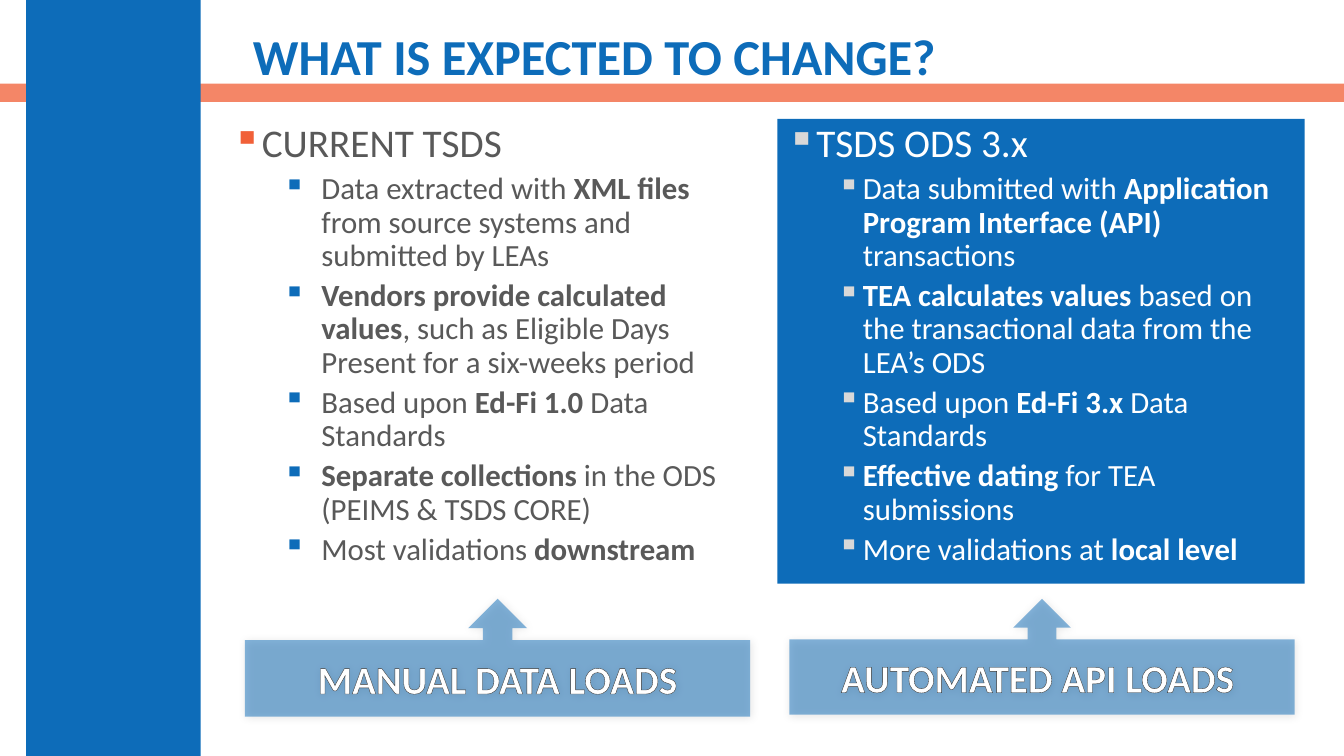
from lxml import etree
from pptx import Presentation, util as u
from pptx.dml.color import RGBColor
from pptx.enum import shapes, text
from pptx.oxml.ns import qn

Inches, Pt = u.Inches, u.Pt

# Content: *asterisks* enclose bold words
BLUE, ORANGE, GREY, PALE, WHITE = "0D6CB9", "F16038", "595959", "D8D8D8", "FFFFFF"
TITLE = "WHAT IS EXPECTED TO CHANGE?"
COLUMNS = [
    dict(box=(2.21, 1.18, 5.23, 4.76), fill=None, color=GREY,
         bullets=(ORANGE, BLUE), indent=(0.88, 0.38), heading="CURRENT TSDS",
         points=[
             "Data extracted with *XML files *from source systems and submitted by LEAs",
             "*Vendors provide calculated values*, such as Eligible Days Present for a six-weeks period",
             "Based upon *Ed-Fi 1.0 *Data Standards",
             "*Separate collections *in the ODS (PEIMS & TSDS CORE)",
             "Most validations *downstream*"]),
    dict(box=(7.71, 1.18, 5.23, 4.61), fill=BLUE, color=WHITE,
         bullets=(PALE, PALE), indent=(0.75, 0.25), heading="TSDS ODS 3.x",
         points=[
             "Data submitted with *Application Program Interface (API) *transactions",
             "*TEA calculates values *based on the transactional data from the LEA’s ODS",
             "Based upon *Ed-Fi 3.x *Data Standards",
             "*Effective dating *for TEA submissions",
             "More validations at *local level*"]),
]
CALLOUTS = [("MANUAL DATA LOADS", (2.43, 5.94, 5.01, 1.17)),
            ("AUTOMATED API LOADS ", (7.83, 5.94, 5.01, 1.15))]


def rgb(value):
    return RGBColor.from_string(value)


def sub(parent, tag, **attrs):
    return etree.SubElement(parent, qn(tag), {k: str(v) for k, v in attrs.items()})


def add_box(box, fill=None, alpha=100, preset=shapes.MSO_SHAPE.RECTANGLE):
    place = [Inches(v) for v in box]
    if fill is None:
        return s.shapes.add_textbox(*place)
    sp = s.shapes.add_shape(preset, *place)
    sp.shadow.inherit = False
    sp.line.fill.background()
    sp.fill.solid()
    sp.fill.fore_color.rgb = rgb(fill)
    if alpha < 100:
        color = sp.fill._xPr.find(".//" + qn("a:srgbClr"))
        sub(color, "a:alpha", val=alpha * 1000)
    return sp


def set_frame(sp, anchor):
    tf = sp.text_frame
    for name, value in dict(word_wrap=True, vertical_anchor=anchor).items():
        setattr(tf, name, value)
    return tf


def add_run(p, words, size, color, bold=False):
    r = p.add_run()
    r.text = words
    for name, value in dict(name="Calibri", size=Pt(size), bold=bold).items():
        setattr(r.font, name, value)
    r.font.color.rgb = rgb(color)
    return r


def add_bullet(p, color, left, hang):
    pPr = p._p.get_or_add_pPr()
    pPr.set("marL", str(Inches(left)))
    pPr.set("indent", str(-Inches(hang)))
    sub(sub(pPr, "a:buClr"), "a:srgbClr", val=color)
    sub(pPr, "a:buChar", char="▪")


prs = Presentation()
prs.slide_width, prs.slide_height = Inches(13.33), Inches(7.5)
s = prs.slides.add_slide(prs.slide_layouts[6])

# Bands and title
add_box((0, 0.83, 13.33, 0.18), ORANGE, 76)
add_box((0.26, 0, 1.73, 7.5), BLUE)
tf = set_frame(add_box((2.41, 0.18, 10.53, 0.82)), text.MSO_ANCHOR.MIDDLE)
p = tf.paragraphs[0]
p.line_spacing = 0.9
add_run(p, TITLE, 36, BLUE, True)

# Comparison columns
for col in COLUMNS:
    tf = set_frame(add_box(col["box"], col["fill"]), text.MSO_ANCHOR.TOP)
    for i, line in enumerate([col["heading"]] + col["points"]):
        p = tf.paragraphs[0] if i == 0 else tf.add_paragraph()
        level = min(i, 1)
        left, hang = col["indent"] if level else (0.25, 0.25)
        add_bullet(p, col["bullets"][level], left, hang)
        for name, value in dict(level=level, alignment=text.PP_ALIGN.LEFT,
                                line_spacing=0.9, space_before=Pt(5 * level)).items():
            setattr(p, name, value)
        for n, words in enumerate(line.split("*")):
            if words:
                add_run(p, words, 22 if level else 28, col["color"], n % 2 == 1)

# Arrow callouts with a soft shadow and outlined letters
for label, box in CALLOUTS:
    sp = add_box(box, BLUE, 50, shapes.MSO_SHAPE.UP_ARROW_CALLOUT)
    effects = sp._element.spPr.find(qn("a:effectLst"))
    shadow = sub(effects, "a:outerShdw", blurRad=Pt(6), dist=Pt(1),
                 dir=45 * 60000, algn="tl", rotWithShape=0)
    sub(sub(shadow, "a:srgbClr", val="000000"), "a:alpha", val=20000)
    p = set_frame(sp, text.MSO_ANCHOR.MIDDLE).paragraphs[0]
    p.alignment = text.PP_ALIGN.CENTER
    r = add_run(p, label, 28, WHITE, True)
    outline = etree.Element(qn("a:ln"), w=str(Pt(0.8)))
    sub(sub(outline, "a:solidFill"), "a:srgbClr", val="363534")
    r._r.get_or_add_rPr().insert(0, outline)

prs.save("out.pptx")
